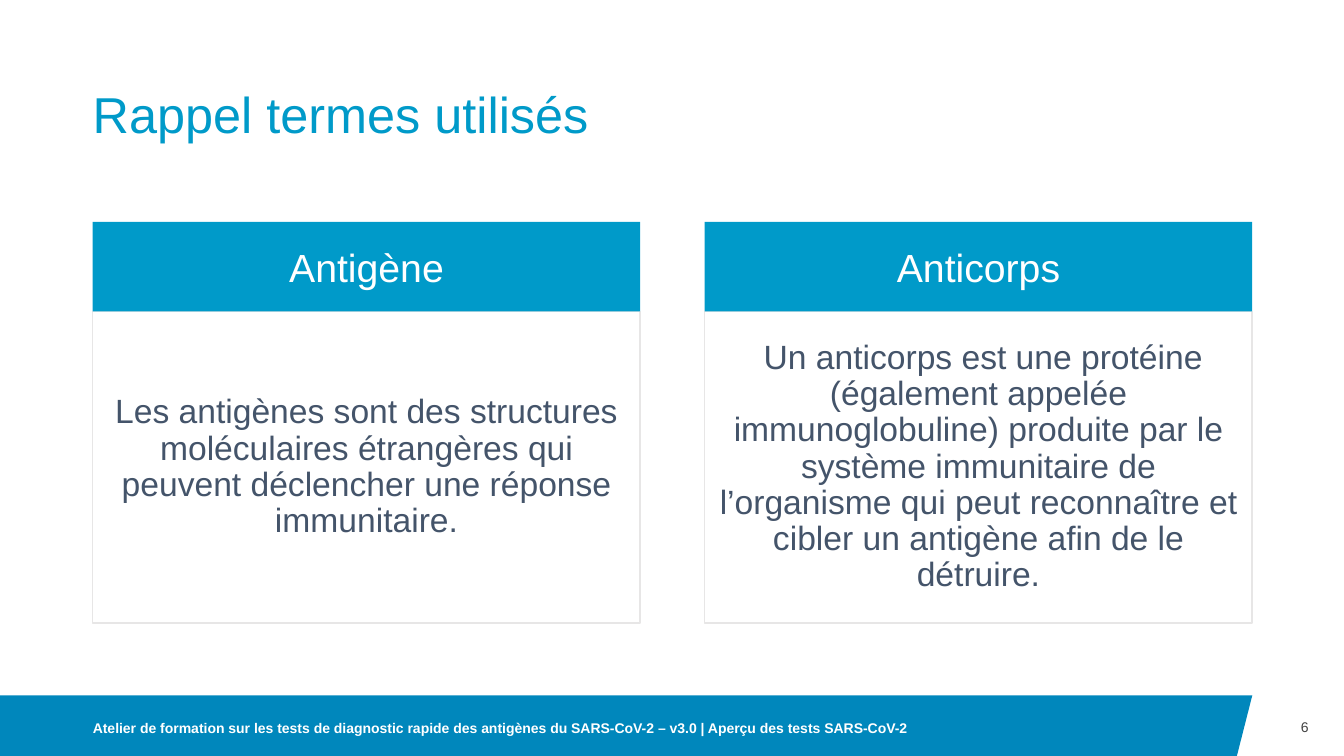
from dataclasses import dataclass

from pptx import Presentation
from pptx.dml.color import RGBColor
from pptx.enum.shapes import MSO_SHAPE
from pptx.enum.text import MSO_ANCHOR, PP_ALIGN
from pptx.util import Inches, Pt

RECTANGLE = MSO_SHAPE.RECTANGLE
MIDDLE, BOTTOM = MSO_ANCHOR.MIDDLE, MSO_ANCHOR.BOTTOM
LEFT, CENTER, RIGHT = PP_ALIGN.LEFT, PP_ALIGN.CENTER, PP_ALIGN.RIGHT


@dataclass(frozen=True)
class Theme:
    font: str = "Arial"
    accent: str = "009AC9"
    band: str = "0087BC"
    white: str = "FFFFFF"
    body: str = "44546A"
    border: str = "E7E6E6"
    number: str = "424242"
    title_size: int = 36
    heading_size: int = 28
    body_size: int = 24
    footer_size: int = 10


THEME = Theme()
MARGIN = 0.92
CARD_TOP, CARD_WIDTH, CARD_GAP = 2.2, 5.43, 0.64
HEADING_HEIGHT, BODY_HEIGHT = 0.89, 3.09
FOOTER_TOP, FOOTER_RIGHT, SLIDE_HEIGHT = 6.9, 12.42, 7.5

CARDS = [
    ("Antigène",
     "Les antigènes sont des structures moléculaires étrangères qui peuvent "
     "déclencher une réponse immunitaire."),
    ("Anticorps",
     " Un anticorps est une protéine (également appelée immunoglobuline) "
     "produite par le système immunitaire de l’organisme qui peut reconnaître "
     "et cibler un antigène afin de le détruire."),
]


def paint(shape, fill, line=None):
    shape.shadow.inherit = False
    shape.fill.solid()
    shape.fill.fore_color.rgb = RGBColor.from_string(fill)
    if line:
        shape.line.color.rgb = RGBColor.from_string(line)
        shape.line.width = Pt(1)
    else:
        shape.line.fill.background()


def write(shape, text, size, color, align=LEFT, anchor=MIDDLE, inset=0,
          bold=False, spacing=1.0):
    frame = shape.text_frame
    frame.word_wrap = True
    frame.vertical_anchor = anchor
    frame.margin_left = frame.margin_right = Inches(inset)
    frame.margin_top = frame.margin_bottom = Inches(inset)
    paragraph = frame.paragraphs[0]
    paragraph.text = text
    paragraph.alignment = align
    paragraph.line_spacing = spacing
    paragraph.font.name = THEME.font
    paragraph.font.size = Pt(size)
    paragraph.font.bold = bold
    paragraph.font.color.rgb = RGBColor.from_string(color)


def add_label(slide, box, text, size, color, **style):
    label = slide.shapes.add_textbox(*map(Inches, box))
    write(label, text, size, color, **style)


def add_panel(slide, box, text, size, color, fill, line=None, spacing=1.0):
    panel = slide.shapes.add_shape(RECTANGLE, *map(Inches, box))
    paint(panel, fill, line)
    write(panel, text, size, color, align=CENTER, inset=0.1, spacing=spacing)


def add_card(slide, left, heading, body):
    """Place a bordered definition under a coloured heading."""
    add_panel(slide, (left, CARD_TOP + HEADING_HEIGHT, CARD_WIDTH, BODY_HEIGHT),
              body, THEME.body_size, THEME.body, THEME.white, THEME.border,
              spacing=0.9)
    add_panel(slide, (left, CARD_TOP, CARD_WIDTH, HEADING_HEIGHT),
              heading, THEME.heading_size, THEME.white, THEME.accent)


def add_footer_band(slide):
    bottom = FOOTER_TOP + 0.63
    builder = slide.shapes.build_freeform(0, Inches(FOOTER_TOP))
    corners = [(FOOTER_RIGHT, FOOTER_TOP), (FOOTER_RIGHT - 0.16, bottom), (0, bottom)]
    builder.add_line_segments([(Inches(x), Inches(y)) for x, y in corners])
    paint(builder.convert_to_shape(), THEME.band)


def main():
    presentation = Presentation()
    presentation.slide_width = Inches(13.33)
    presentation.slide_height = Inches(SLIDE_HEIGHT)
    slide = presentation.slides.add_slide(presentation.slide_layouts[6])

    add_footer_band(slide)
    add_label(slide, (MARGIN, 0.4, 11.5, 1.03), "Rappel termes utilisés",
              THEME.title_size, THEME.accent, anchor=BOTTOM, spacing=0.9)
    for index, (heading, body) in enumerate(CARDS):
        add_card(slide, MARGIN + index * (CARD_WIDTH + CARD_GAP), heading, body)
    add_label(slide, (MARGIN, 6.95, 8.28, 0.55),
              "Atelier de formation sur les tests de diagnostic rapide des "
              "antigènes du SARS-CoV-2 – v3.0 | Aperçu des tests SARS-CoV-2",
              THEME.footer_size, THEME.white, bold=True)
    add_label(slide, (FOOTER_RIGHT, FOOTER_TOP, 0.56, 0.63), "6",
              THEME.footer_size, THEME.number, align=RIGHT)

    presentation.save("out.pptx")


if __name__ == "__main__":
    main()
